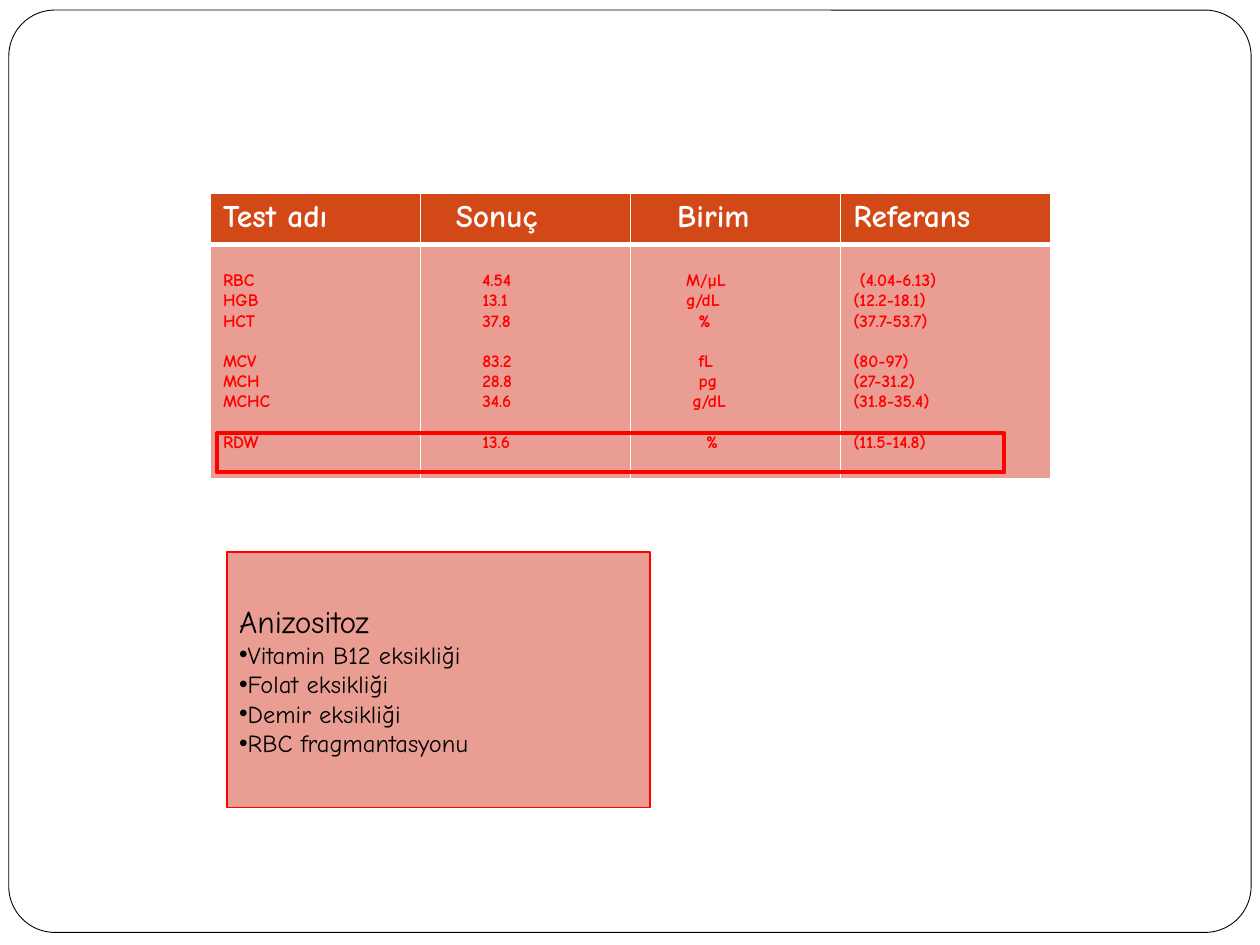
from lxml.etree import SubElement
from pptx import Presentation
from pptx.dml.color import RGBColor
from pptx.enum.shapes import MSO_SHAPE
from pptx.enum.text import MSO_ANCHOR, PP_ALIGN
from pptx.oxml.ns import qn
from pptx.util import Inches, Pt

FONT = "Comic Neue"
WHITE, BLACK, RED = "FFFFFF", "000000", "FF0000"
ORANGE, PINK = "D34817", "E99D93"
LINE_GAP = 11.5  # one 10 pt text line, in points

# Column: (header, header indent, [(value, indent)]), indents in inches
COLUMNS = [
    ("Test adı", 0, [(t, 0) for t in
                     ("RBC", "HGB", "HCT", "MCV", "MCH", "MCHC", "RDW")]),
    ("Sonuç", 0.18, [(t, 0.39) for t in
                     ("4.54", "13.1", "37.8", "83.2", "28.8", "34.6", "13.6")]),
    ("Birim", 0.27, [("M/µL", 0.34), ("g/dL", 0.34), ("%", 0.44), ("fL", 0.44),
                     ("pg", 0.44), ("g/dL", 0.39), ("%", 0.5)]),
    ("Referans", 0, [("(4.04-6.13)", 0.05), ("(12.2-18.1)", 0),
                     ("(37.7-53.7)", 0), ("(80-97)", 0), ("(27-31.2)", 0),
                     ("(31.8-35.4)", 0), ("(11.5-14.8)", 0)]),
]
GROUP_STARTS = (3, 6)  # tests that follow a gap
CAUSES_TITLE = "Anizositoz"
CAUSES = ["Vitamin B12 eksikliği", "Folat eksikliği", "Demir eksikliği",
          "RBC fragmantasyonu"]


def rgb(color):
    return RGBColor.from_string(color)


def add_box(shape, x, y, w, h, fill, line, width):
    s = slide.shapes.add_shape(shape, Inches(x), Inches(y), Inches(w), Inches(h))
    s.shadow.inherit = False
    if fill:
        s.fill.solid()
        s.fill.fore_color.rgb = rgb(fill)
    else:
        s.fill.background()
    s.line.color.rgb = rgb(line)
    s.line.width = Pt(width)
    return s


def write(tf, items, size, color, bold=False):
    """Write (text, indent) items as left-aligned paragraphs."""
    tf.text = "\n".join(text for text, _ in items)
    for p, (_, indent) in zip(tf.paragraphs, items):
        p.alignment = PP_ALIGN.LEFT
        pPr = p._p.get_or_add_pPr()
        pPr.set("marL", str(Inches(indent)))
        pPr.set("indent", "0")
        font = p.runs[0].font
        font.name, font.size, font.bold = FONT, Pt(size), bold
        font.color.rgb = rgb(color)


def style_cell(cell, fill, top, bottom):
    tcPr = cell._tc.get_or_add_tcPr()
    for side, width in zip("LRTB", (1, 1, top, bottom)):
        ln = SubElement(tcPr, qn("a:ln" + side), w=str(Pt(width)))
        SubElement(SubElement(ln, qn("a:solidFill")), qn("a:srgbClr"), val=WHITE)
    cell.fill.solid()
    cell.fill.fore_color.rgb = rgb(fill)


prs = Presentation()
prs.slide_width, prs.slide_height = Inches(10), Inches(7.5)
slide = prs.slides.add_slide(prs.slide_layouts[6])

# Slide frame
frame = add_box(MSO_SHAPE.ROUNDED_RECTANGLE, 0.07, 0.08, 9.86, 7.32,
                WHITE, BLACK, 0.5)
frame.adjustments[0] = 0.05

# Blood count table
table = slide.shapes.add_table(2, len(COLUMNS), Inches(1.67), Inches(1.53),
                               Inches(6.67), Inches(2.27)).table
table.horz_banding = False
table.rows[0].height, table.rows[1].height = Inches(0.41), Inches(1.86)
for col, (header, indent, values) in enumerate(COLUMNS):
    head, body = table.cell(0, col), table.cell(1, col)
    style_cell(head, ORANGE, 1, 3)
    write(head.text_frame, [(header, indent)], 18, WHITE, True)
    style_cell(body, PINK, 3, 1)
    body.margin_top = Inches(0.21)
    write(body.text_frame, values, 10, RED, True)
    for i in GROUP_STARTS:
        body.text_frame.paragraphs[i].space_before = Pt(LINE_GAP)

# Highlight on the RDW row
add_box(MSO_SHAPE.RECTANGLE, 1.72, 3.44, 6.25, 0.31, None, RED, 2.25)

# Causes box
causes = add_box(MSO_SHAPE.RECTANGLE, 1.8, 4.38, 3.36, 2.03, PINK, RED, 1)
tf = causes.text_frame
tf.word_wrap = True
tf.vertical_anchor = MSO_ANCHOR.MIDDLE
write(tf, [(text, 0) for text in [CAUSES_TITLE] + CAUSES], 14, BLACK)
tf.paragraphs[0].runs[0].font.size = Pt(18)
for p in tf.paragraphs[1:]:
    pPr = p._p.get_or_add_pPr()
    SubElement(pPr, qn("a:buFont"), typeface="Arial")
    SubElement(pPr, qn("a:buChar"), char="•")

prs.save("out.pptx")
